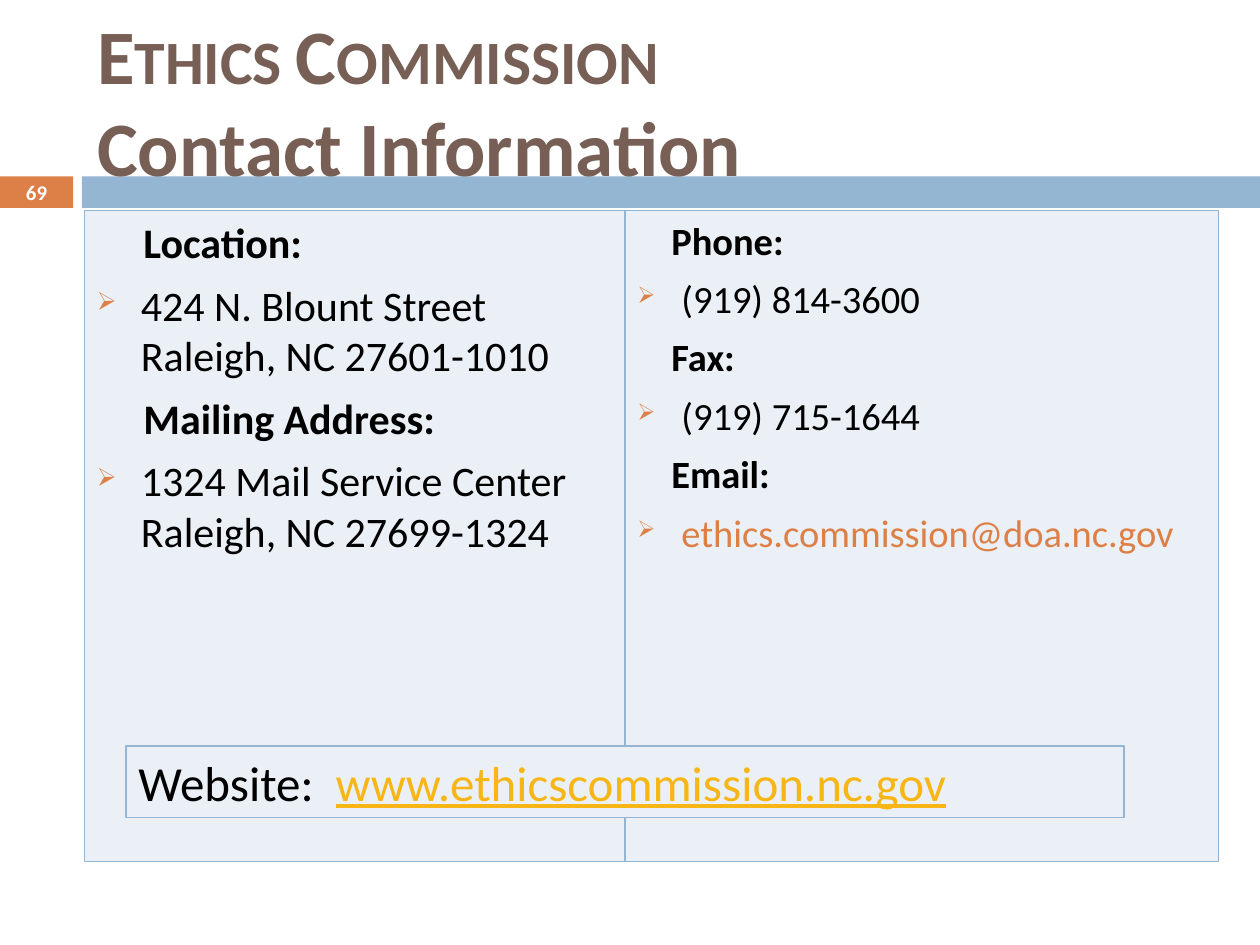
import pptx
import pptx.util
import pptx.dml.color
import pptx.enum.shapes
import pptx.enum.text
import lxml.etree

Inches, Pt = pptx.util.Inches, pptx.util.Pt
Align, Anchor = pptx.enum.text.PP_ALIGN, pptx.enum.text.MSO_ANCHOR
hues = {"blue": "94B6D2", "pale": "EAF0F6", "rust": "DD8047", "brown": "775F55",
        "gold": "F7B615", "black": "000000", "white": "FFFFFF"}
space = "http://schemas.openxmlformats.org/drawingml/2006/main"

deck = pptx.Presentation()
deck.slide_width, deck.slide_height = Inches(10), Inches(7.5)
slide = deck.slides.add_slide(deck.slide_layouts[5])


def write(para, text, size, hue="black", bold=False, line=False, small=False):
    for i, part in enumerate(text.split("\n")):
        if i:
            para.add_line_break()
        run = para.add_run()
        run.text = part
        font = run.font
        font.name, font.size, font.bold = "Calibri", Pt(size), bold
        font.underline = line
        font.color.rgb = pptx.dml.color.RGBColor.from_string(hues[hue])
        if small:
            run._r.get_or_add_rPr().set("cap", "small")


def panel(left, top, wide, high, fill, edge=None):
    box = slide.shapes.add_shape(pptx.enum.shapes.MSO_SHAPE.RECTANGLE,
                                 *map(Inches, (left, top, wide, high)))
    box.shadow.inherit = False
    box.fill.solid()
    box.fill.fore_color.rgb = pptx.dml.color.RGBColor.from_string(hues[fill])
    if edge:
        box.line.color.rgb = pptx.dml.color.RGBColor.from_string(hues[edge])
        box.line.width = Pt(0.75)
    else:
        box.line.fill.background()
    frame = box.text_frame
    frame.word_wrap, frame.vertical_anchor = True, Anchor.TOP
    frame.paragraphs[0].alignment = Align.LEFT
    return box


edge, split, end = 0.67, 4.96, 9.67
bar, body, foot = 1.4, 1.67, 6.84

badge = panel(0, bar, 0.58, 0.25, "rust")
badge.text_frame.vertical_anchor = Anchor.MIDDLE
badge.text_frame.paragraphs[0].alignment = Align.CENTER
write(badge.text_frame.paragraphs[0], "69", 11.9, hue="white", bold=True)
band = panel(0.65, bar, 10 - 0.65, 0.25, "blue")

title = slide.shapes.title
band._element.addnext(title._element)
title.left, title.top, title.width, title.height = map(Inches, (edge, 0.25, 8.92, 1.08))
title.text_frame.word_wrap = True
title.text_frame.vertical_anchor = Anchor.MIDDLE
head = title.text_frame.paragraphs[0]
head.alignment = Align.LEFT
write(head, "Ethics Commission\n", 44, hue="brown", bold=True, small=True)
write(head, "Contact Information", 44, hue="brown", bold=True)

columns = [
    (edge, split, 24, 0.37, [
        ("Location:", "424 N. Blount Street\nRaleigh, NC 27601-1010", "black"),
        ("Mailing Address:", "1324 Mail Service Center\nRaleigh, NC 27699-1324", "black")]),
    (split, end, 22, 0.27, [
        ("Phone:", "(919) 814-3600", "black"),
        ("Fax:", "(919) 715-1644", "black"),
        ("Email:", "ethics.commission@doa.nc.gov", "rust")]),
]
for left, right, size, inset, items in columns:
    frame = panel(left, body, right - left, foot - body, "pale", "blue").text_frame
    para = frame.paragraphs[0]
    for label, value, hue in items:
        if para.runs:
            para = frame.add_paragraph()
        para.alignment, para.space_before = Align.LEFT, Pt(7)
        para._p.get_or_add_pPr().set("marL", str(Inches(inset)))
        write(para, label, size, bold=True)

        para = frame.add_paragraph()
        para.alignment, para.space_before = Align.LEFT, Pt(7)
        props = para._p.get_or_add_pPr()
        props.set("marL", str(Inches(0.35)))
        props.set("indent", str(-Inches(0.35)))
        tint = lxml.etree.SubElement(props, f"{{{space}}}buClr")
        lxml.etree.SubElement(tint, f"{{{space}}}srgbClr", val=hues["rust"])
        lxml.etree.SubElement(props, f"{{{space}}}buSzPct", val="60000")
        lxml.etree.SubElement(props, f"{{{space}}}buChar", char="➢")
        write(para, value, size, hue=hue)

site = panel(1, 5.92, 7.92, 0.57, "pale", "blue").text_frame.paragraphs[0]
write(site, "Website:  ", 28)
write(site, "www.ethicscommission.nc.gov", 28, hue="gold", line=True)

deck.save("out.pptx")
